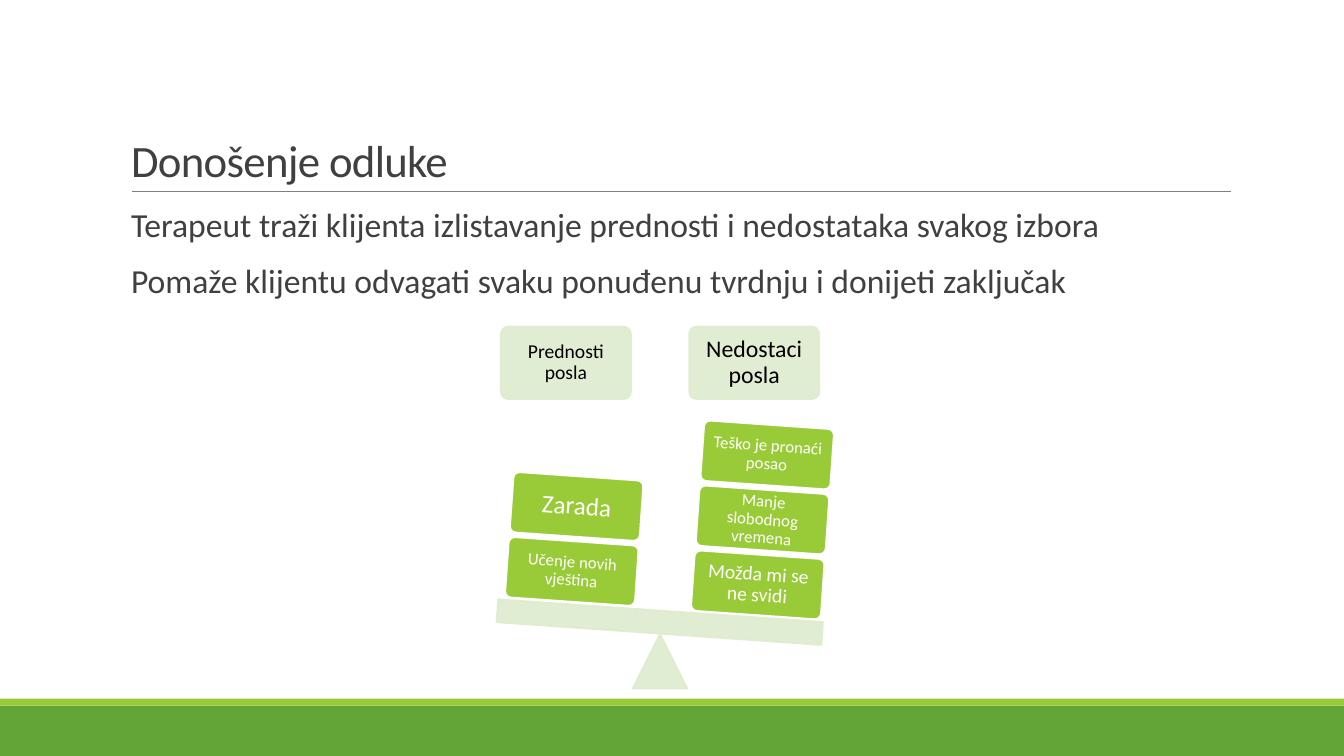
"""Build a decision-making slide with a tilted balance of pros and cons."""
from lxml import etree
from pptx import Presentation
from pptx import util as u
from pptx.dml import color
from pptx.enum import shapes, text
from pptx.oxml import ns

SHAPE = shapes.MSO_SHAPE
ALIGN = text.PP_ALIGN
ANCHOR = text.MSO_ANCHOR

FONT = "Calibri"
DARK, GRAY, BLACK, WHITE = "404040", "808080", "000000", "FFFFFF"
GREEN, LIME, PALE = "63A537", "99CB38", "DEECCE"
TILT = 4


def rgb(code):
    return color.RGBColor.from_string(code)


class SlideBuilder:
    def __init__(self, deck, font):
        self.font = font
        self.page = deck.slides.add_slide(deck.slide_layouts[1])

    def add_span(self, para, words, size, ink, align=ALIGN.LEFT, line=0.9):
        para.alignment = align
        para.line_spacing = line
        span = para.add_run()
        span.text = words
        span.font.name = self.font
        span.font.size = u.Pt(size)
        span.font.color.rgb = rgb(ink)
        return span

    def place(self, holder, left, top, width, height, anchor):
        holder.left, holder.top = u.Pt(left), u.Pt(top)
        holder.width, holder.height = u.Pt(width), u.Pt(height)
        frame = holder.text_frame
        frame.word_wrap = True
        frame.auto_size = text.MSO_AUTO_SIZE.NONE
        frame.vertical_anchor = anchor
        return frame

    def title(self, words):
        frame = self.place(self.page.shapes.title, 86.4, 22.3, 792, 114.5, ANCHOR.BOTTOM)
        span = self.add_span(frame.paragraphs[0], words, 32, DARK, line=0.85)
        span.font._element.set("spc", "-50")

    def body(self, lines):
        frame = self.place(self.page.placeholders[1], 86.4, 145.4, 792, 316.8, ANCHOR.TOP)
        frame.margin_left = frame.margin_right = 0
        for index, words in enumerate(lines):
            para = frame.add_paragraph() if index else frame.paragraphs[0]
            self.add_span(para, words, 24, DARK)
            para.space_before, para.space_after = u.Pt(12), u.Pt(2)
            props = para._p.get_or_add_pPr()
            props.set("marL", str(u.Pt(7.2)))
            props.set("indent", "0")
            etree.SubElement(props, ns.qn("a:buNone"))

    def shape(self, kind, left, top, width, height, fill, edge=None, alpha=100, turn=0):
        box = self.page.shapes.add_shape(kind, u.Pt(left), u.Pt(top), u.Pt(width), u.Pt(height))
        box.shadow.inherit = False
        box.rotation = turn
        box.fill.solid()
        box.fill.fore_color.rgb = rgb(fill)
        if edge:
            box.line.color.rgb = rgb(edge)
            box.line.width = u.Pt(1.25)
        else:
            box.line.fill.background()
        if alpha < 100:
            for tint in box._element.spPr.iter(ns.qn("a:srgbClr")):
                etree.SubElement(tint, ns.qn("a:alpha"), val=str(alpha * 1000))
        return box

    def label(self, box, words, size, ink, inset):
        box.adjustments[0] = 0.1
        frame = box.text_frame
        frame.word_wrap = True
        frame.vertical_anchor = ANCHOR.MIDDLE
        frame.margin_left = frame.margin_right = u.Pt(inset)
        frame.margin_top = frame.margin_bottom = u.Pt(inset)
        self.add_span(frame.paragraphs[0], words, size, ink, ALIGN.CENTER)

    def heading(self, left, words, size):
        box = self.shape(SHAPE.ROUNDED_RECTANGLE, left, 233.3, 92.9, 51.8, PALE, PALE, 90)
        self.label(box, words, size, BLACK, size * 0.3)

    def stack(self, left, top, weights):
        for level, (words, size) in enumerate(weights):
            box = self.shape(SHAPE.ROUNDED_RECTANGLE, left + 3.4 * level, top - 46.4 * level,
                             92.9, 43.2, LIME, WHITE, turn=TILT)
            self.label(box, words, size, WHITE, size * 0.3 + 1)

    def rule(self, left, right, top):
        line = self.page.shapes.add_connector(
            shapes.MSO_CONNECTOR.STRAIGHT, u.Pt(left), u.Pt(top), u.Pt(right), u.Pt(top))
        line.line.color.rgb = rgb(GRAY)
        line.line.width = u.Pt(0.5)
        etree.SubElement(line._element.spPr, ns.qn("a:effectLst"))


def main():
    deck = Presentation()
    deck.slide_width, deck.slide_height = u.Pt(960), u.Pt(540)
    slide = SlideBuilder(deck, FONT)

    slide.shape(SHAPE.RECTANGLE, 0, 504, 960, 36, GREEN)
    slide.shape(SHAPE.RECTANGLE, 0, 499, 960, 5, LIME)
    slide.rule(94.3, 879, 136.8)
    slide.title("Donošenje odluke")
    slide.body([
        "Terapeut traži klijenta izlistavanje prednosti i nedostataka svakog izbora",
        "Pomaže klijentu odvagati svaku ponuđenu tvrdnju i donijeti zaključak",
    ])

    slide.heading(357.8, "Prednosti posla", 14)
    slide.heading(492.3, "Nedostaci posla", 17)
    slide.shape(SHAPE.ISOSCELES_TRIANGLE, 452, 453, 38.9, 38.9, PALE, PALE, 90)
    slide.shape(SHAPE.RECTANGLE, 355, 436.2, 232.6, 16.4, PALE, PALE, 90, TILT)
    slide.stack(494.8, 396.2, [
        ("Možda mi se ne svidi", 14),
        ("Manje slobodnog vremena", 12),
        ("Teško je pronaći posao", 12),
    ])
    slide.stack(362, 386.6, [("Učenje novih vještina", 12), ("Zarada", 18)])

    deck.save("out.pptx")


if __name__ == "__main__":
    main()
